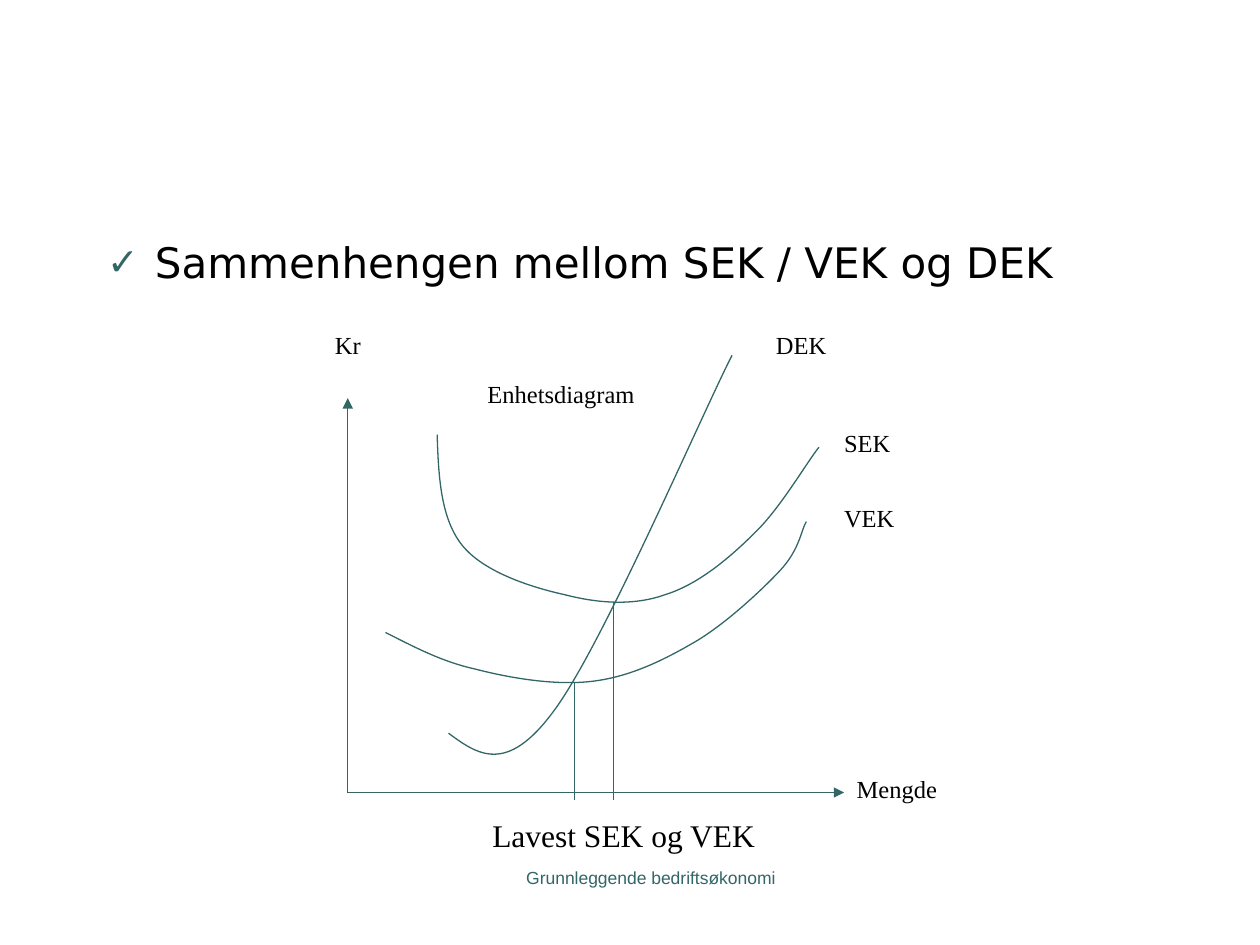
"""Build the slide on how SEK, VEK and DEK relate in a unit cost diagram."""
import pptx
import pptx.dml.color
import pptx.enum.text
import pptx.oxml
import pptx.oxml.ns
import pptx.util
from lxml import etree

Inches = pptx.util.Inches
Pt = pptx.util.Pt
qn = pptx.oxml.ns.qn
ALIGN = pptx.enum.text.PP_ALIGN
TEAL = pptx.dml.color.RGBColor(0x33, 0x66, 0x66)
BLACK = pptx.dml.color.RGBColor(0, 0, 0)


class SlideBuilder:
    """Holds the style, the current slide and the group being drawn in."""

    serif = "Times New Roman"
    line_width = Pt(0.75)

    def __init__(self, deck):
        self.page = deck.slides.add_slide(deck.slide_layouts[1])
        title = self.page.shapes.title._element
        title.getparent().remove(title)
        self.shapes = self.page.shapes

    def start_group(self):
        self.shapes = self.page.shapes.add_group_shape().shapes

    def style_text(self, para, size, font, color):
        para.font.size = Pt(size)
        para.font.name = font
        para.font.color.rgb = color

    def heading(self, text, left, top, width, height):
        box = self.page.placeholders[1]
        box.left, box.top = Inches(left), Inches(top)
        box.width, box.height = Inches(width), Inches(height)
        para = box.text_frame.paragraphs[0]
        para.text = text
        props = para._p.get_or_add_pPr()
        props.set("marL", str(Inches(0.38)))
        props.set("indent", str(-Inches(0.38)))
        color = etree.SubElement(props, qn("a:buClr"))
        etree.SubElement(color, qn("a:srgbClr"), val=str(TEAL))
        etree.SubElement(props, qn("a:buSzPct"), val="90000")
        etree.SubElement(props, qn("a:buFont"), typeface="DejaVu Sans")
        etree.SubElement(props, qn("a:buChar"), char="✓")
        para.space_before = Pt(0)
        self.style_text(para, 24, "DejaVu Sans", BLACK)

    def label(self, text, left, top, width, height=0.33, size=14,
              font=serif, color=BLACK, align=ALIGN.LEFT):
        box = self.shapes.add_textbox(
            Inches(left), Inches(top), Inches(width), Inches(height))
        box.text_frame.word_wrap = True
        para = box.text_frame.paragraphs[0]
        para.text = text
        para.alignment = align
        self.style_text(para, size, font, color)

    def style_line(self, shape):
        shape.line.color.rgb = TEAL
        shape.line.width = self.line_width

    def line(self, x1, y1, x2, y2, arrow=False):
        connector = self.shapes.add_connector(
            pptx.enum.shapes.MSO_CONNECTOR.STRAIGHT,
            Inches(x1), Inches(y1), Inches(x2), Inches(y2))
        self.style_line(connector)
        if arrow:
            etree.SubElement(connector.line._get_or_add_ln(),
                             qn("a:tailEnd"), type="triangle")
        etree.SubElement(connector._element.spPr, qn("a:effectLst"))

    def curve(self, points):
        """Draw a Bézier curve: a start, then two controls and an end per piece."""
        start, *rest = [(Inches(x), Inches(y)) for x, y in points]
        builder = self.shapes.build_freeform(*start)
        builder.add_line_segments(rest, close=False)
        shape = builder.convert_to_shape()
        segments = list(shape._element.iter(qn("a:lnTo")))
        for first in range(0, len(segments), 3):
            piece = segments[first:first + 3]
            bezier = etree.Element(qn("a:cubicBezTo"))
            piece[0].addprevious(bezier)
            for segment in piece:
                bezier.append(segment[0])
                segment.getparent().remove(segment)
        shape.fill.background()
        shape.shadow.inherit = False
        self.style_line(shape)


SEK = [(3.47, 3.45), (3.48, 3.79), (3.5, 4.12), (3.67, 4.33),
       (3.84, 4.54), (4.21, 4.66), (4.48, 4.72),
       (4.75, 4.79), (5.03, 4.81), (5.28, 4.72),
       (5.54, 4.64), (5.79, 4.43), (5.99, 4.23),
       (6.19, 4.04), (6.41, 3.66), (6.5, 3.55)]
VEK = [(3.06, 5.02), (3.28, 5.13), (3.5, 5.25), (3.77, 5.31),
       (4.04, 5.38), (4.39, 5.44), (4.68, 5.41),
       (4.97, 5.38), (5.23, 5.26), (5.49, 5.11),
       (5.74, 4.97), (6.04, 4.69), (6.19, 4.53),
       (6.35, 4.36), (6.36, 4.2), (6.4, 4.14)]
DEK = [(3.56, 5.82), (3.79, 5.99), (4.02, 6.15), (4.39, 5.65),
       (4.77, 5.15), (5.57, 3.29), (5.81, 2.82)]


def main():
    deck = pptx.Presentation()
    deck.slide_width, deck.slide_height = Inches(10), Inches(7.5)
    slide = SlideBuilder(deck)
    slide.heading("Sammenhengen mellom SEK / VEK og DEK", 0.75, 1.83, 8.5, 4.83)
    slide.label("Grunnleggende bedriftsøkonomi", 3.58, 6.83, 3.17, 0.5,
                size=10, font="Arial", color=TEAL, align=ALIGN.CENTER)

    slide.start_group()
    origin_x, origin_y = 2.76, 6.29
    slide.line(origin_x, origin_y, origin_x, 3.16, arrow=True)
    slide.line(origin_x, origin_y, 6.7, origin_y, arrow=True)
    for points in (SEK, VEK, DEK):
        slide.curve(points)
    for text, left, top, width in (
            ("Kr", 2.56, 2.57, 0.71), ("Mengde", 6.7, 6.09, 1.11),
            ("Enhetsdiagram", 3.77, 2.96, 2.52), ("VEK", 6.6, 3.94, 1.01),
            ("SEK", 6.6, 3.35, 1.01), ("DEK", 6.06, 2.57, 1.01)):
        slide.label(text, left, top, width)

    slide.start_group()
    for x, top in ((4.56, 5.41), (4.87, 4.78)):
        slide.line(x, top, x, 6.35)
    slide.label("Lavest SEK og VEK", 3.77, 6.43, 2.36, 0.4,
                size=18, align=ALIGN.CENTER)
    deck.save("out.pptx")


if __name__ == "__main__":
    main()
